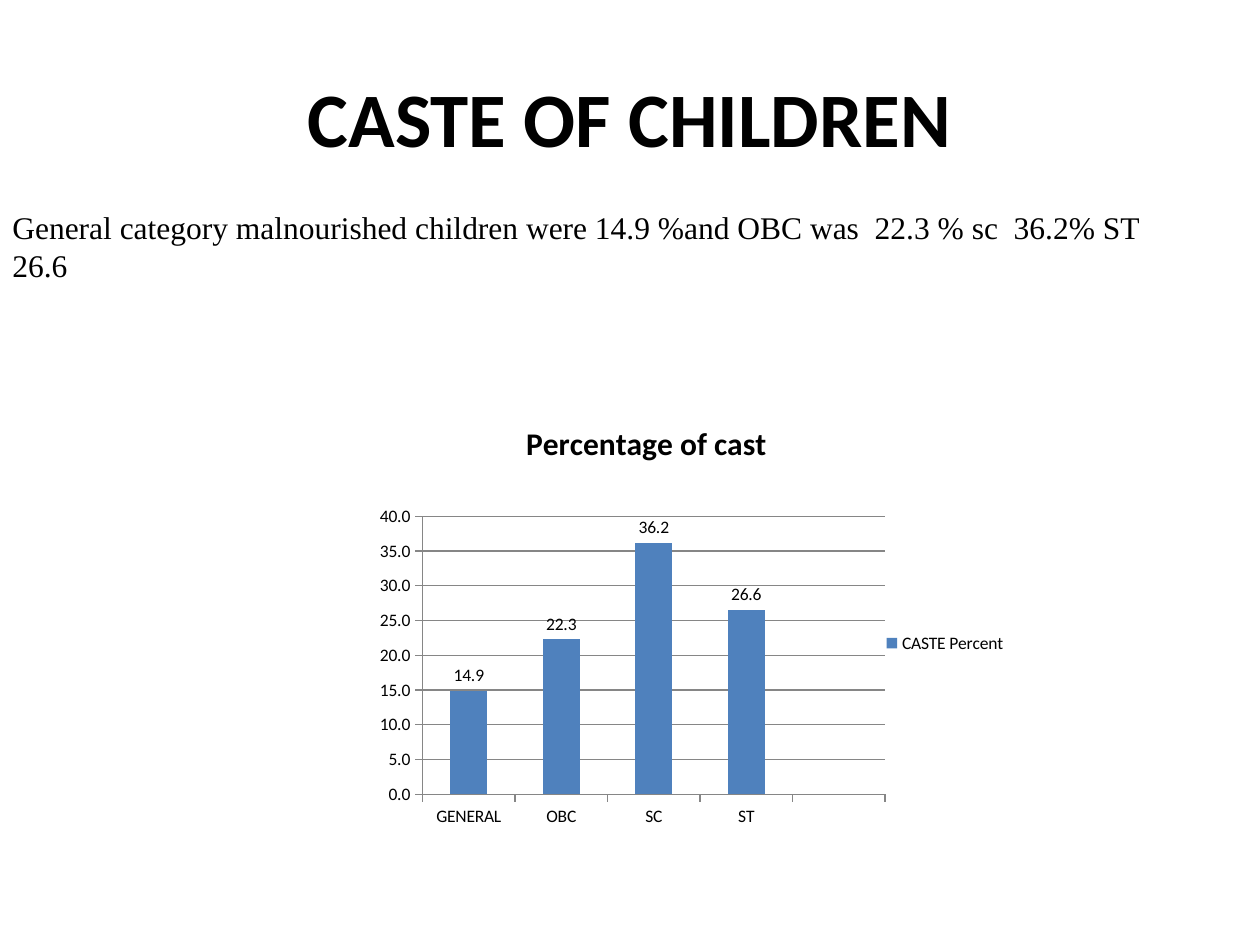
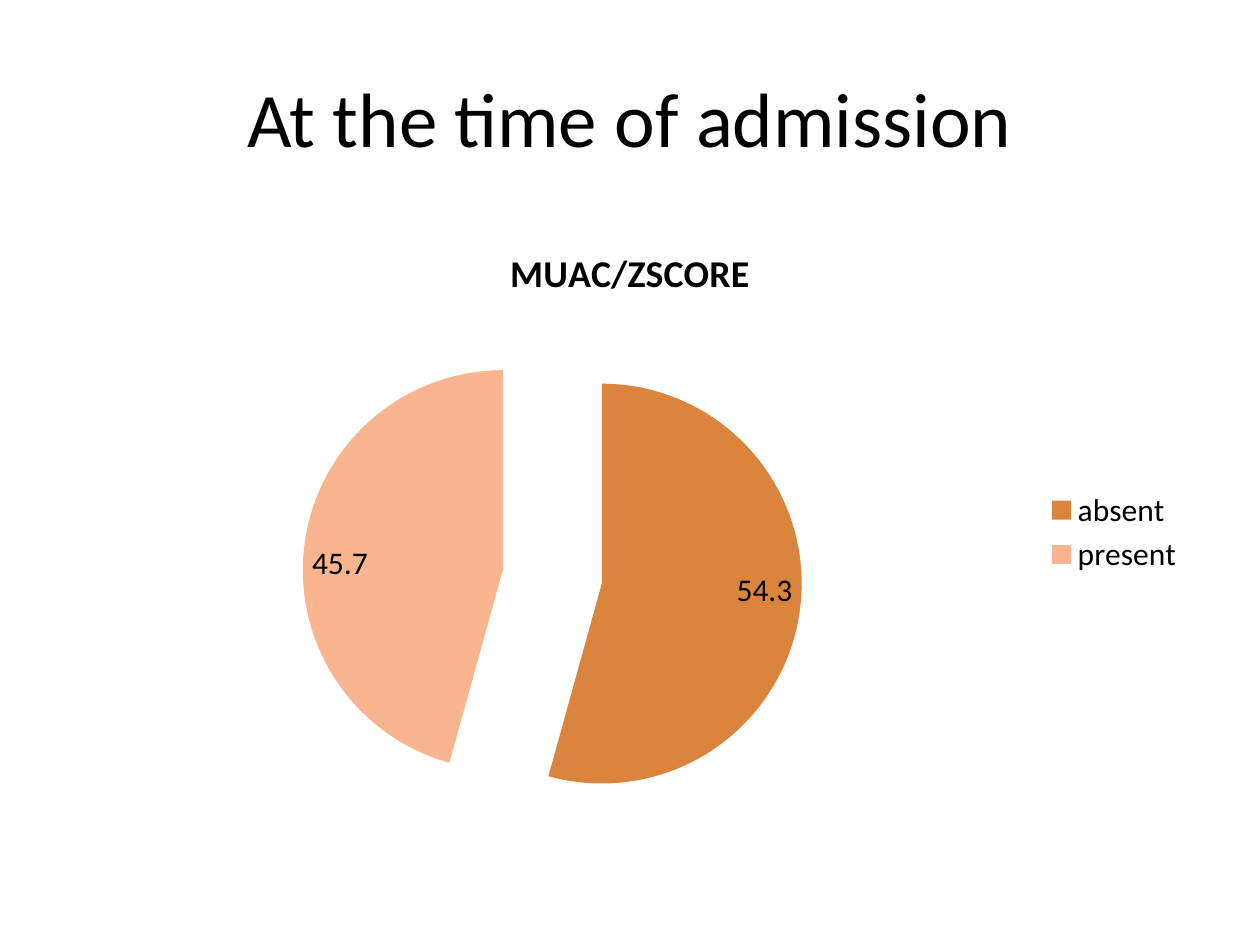
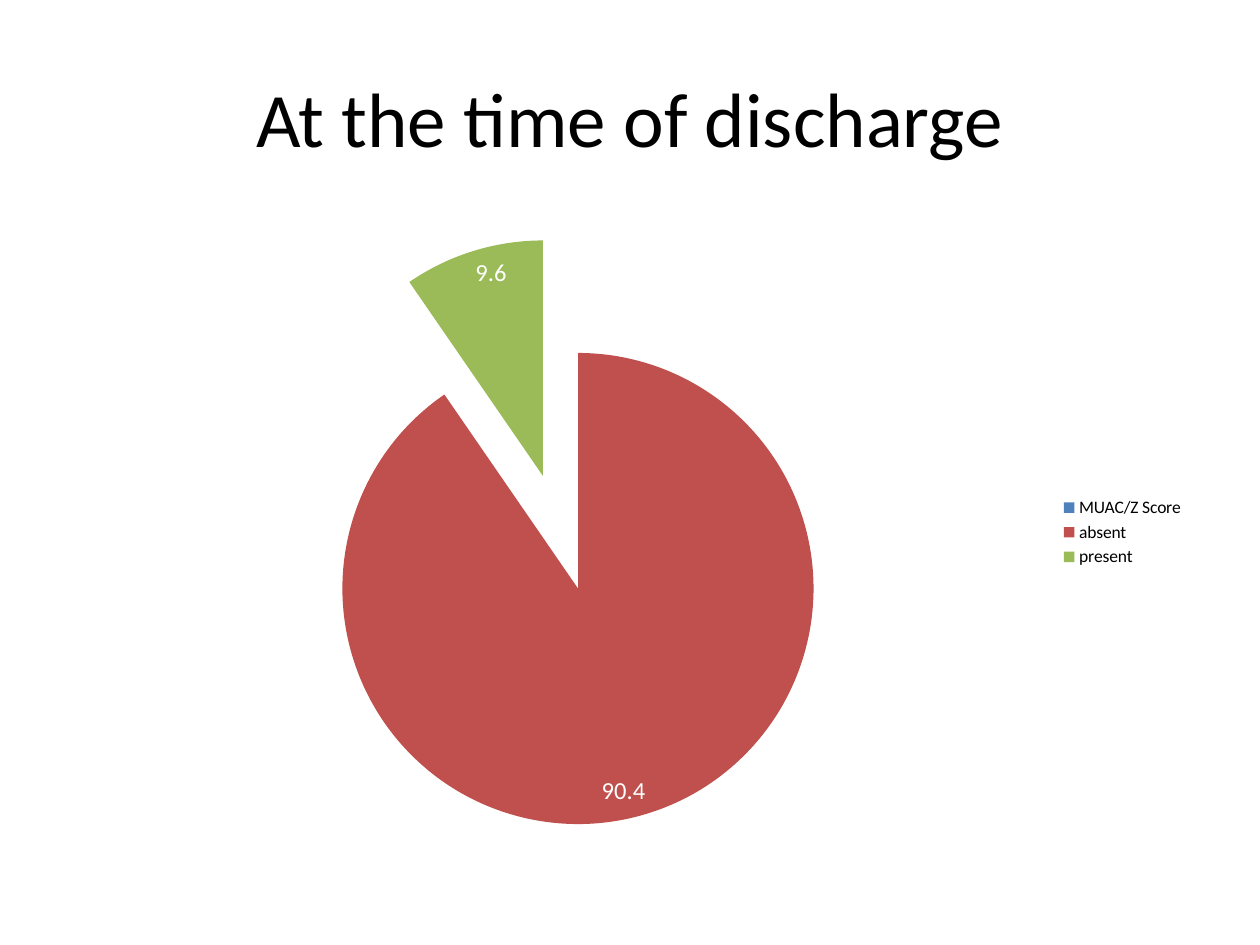
from lxml.etree import SubElement
from pptx import Presentation
from pptx.chart.data import CategoryChartData
from pptx.dml.color import RGBColor
from pptx.enum.chart import XL_CHART_TYPE, XL_LABEL_POSITION, XL_LEGEND_POSITION, XL_TICK_MARK
from pptx.enum.text import MSO_ANCHOR, PP_ALIGN
from pptx.oxml import parse_xml
from pptx.oxml.ns import nsdecls, qn
from pptx.util import Inches, Pt

# Shared look
SANS, SERIF = "Calibri", "Times New Roman"
BLACK, WHITE, GREY = "000000", "FFFFFF", "868686"
BLUE, RED, GREEN = "4F81BD", "C0504D", "9BBB59"
AMBER, PEACH = "DB843D", "F9B590"
HEAD = (0.5, 0.3, 9, 1.25)
BODY = (0.5, 1.75, 9, 4.95)
DECIMAL = "###0.0"


def put(target, form):
    """Set each format value on the target."""
    for name, value in form.items():
        setattr(target, name, value)


def paint(part, color):
    """Colour a font, a line or a fill."""
    if hasattr(part, "solid"):
        part.solid()
        part.fore_color.rgb = RGBColor.from_string(color)
    else:
        part.color.rgb = RGBColor.from_string(color)


def style(font, size, color=BLACK, name=SANS, bold=False):
    put(font, {"size": Pt(size), "name": name, "bold": bold})
    paint(font, color)


# Text
def add_text(slide, words, box, frame, align, **font):
    text = slide.shapes.add_textbox(*map(Inches, box)).text_frame
    put(text, {"word_wrap": True, **frame})
    para = text.paragraphs[0]
    para.alignment = align
    run = para.add_run()
    run.text = words
    style(run.font, **font)


def add_head(slide, words, bold=False):
    add_text(slide, words, HEAD, {"vertical_anchor": MSO_ANCHOR.MIDDLE},
             PP_ALIGN.CENTER, size=44, bold=bold)


# Charts
def add_chart(slide, kind, box, cats, name, vals, size, title=None, title_size=18):
    data = CategoryChartData()
    data.categories = cats
    data.add_series(name, vals)
    chart = slide.shapes.add_chart(kind, *map(Inches, box), data).chart
    style(chart.font, size)
    put(chart, {"has_legend": True, "has_title": title is not None})
    put(chart.legend, {"position": XL_LEGEND_POSITION.RIGHT, "include_in_layout": False})
    if title:
        run = chart.chart_title.text_frame.paragraphs[0].add_run()
        run.text = title
        style(run.font, title_size, bold=True)
    return chart


def add_labels(plot, size, color, code, place):
    plot.has_data_labels = True
    labels = plot.data_labels
    put(labels, {"show_value": True, "number_format": code,
                 "number_format_is_linked": False, "position": place})
    style(labels.font, size, color)


def set_plot(chart, x, y, w, h):
    """Fix the inner plot area as shares of the chart."""
    area = chart._chartSpace.find(".//" + qn("c:plotArea"))
    for old in area.findall(qn("c:layout")):
        area.remove(old)
    layout = parse_xml(f"<c:layout {nsdecls('c')}/>")
    manual = SubElement(layout, qn("c:manualLayout"))
    marks = {"layoutTarget": "inner", "xMode": "edge", "yMode": "edge",
             "x": x, "y": y, "w": w, "h": h}
    for tag, val in marks.items():
        SubElement(manual, qn("c:" + tag)).set("val", str(val))
    area.insert(0, layout)


def add_bars(slide, box, cats, name, vals, title):
    chart = add_chart(slide, XL_CHART_TYPE.COLUMN_CLUSTERED, box, cats, name,
                      vals, 10, title)
    set_plot(chart, 0.2, 0.24, 0.62, 0.57)
    plot = chart.plots[0]
    put(plot, {"gap_width": 150, "vary_by_categories": False})
    paint(plot.series[0].format.fill, BLUE)
    add_labels(plot, 10, BLACK, DECIMAL, XL_LABEL_POSITION.OUTSIDE_END)
    for axis in (chart.category_axis, chart.value_axis):
        put(axis, {"major_tick_mark": XL_TICK_MARK.OUTSIDE,
                   "minor_tick_mark": XL_TICK_MARK.NONE})
        paint(axis.format.line, GREY)
    axis = chart.value_axis
    put(axis, {"has_major_gridlines": True, "minimum_scale": 0,
               "maximum_scale": 40, "major_unit": 5})
    put(axis.tick_labels, {"number_format": DECIMAL, "number_format_is_linked": False})
    paint(axis.major_gridlines.format.line, GREY)


def add_pie(slide, cats, vals, colors, size, label_size, label_color, title=None):
    chart = add_chart(slide, XL_CHART_TYPE.PIE, BODY, cats, "Series 1", vals,
                      size, title, 21.6)
    plot = chart.plots[0]
    plot.vary_by_categories = True
    series = plot.series[0]
    burst = parse_xml(f'<c:explosion {nsdecls("c")} val="25"/>')
    series._element.find(qn("c:tx")).addnext(burst)
    for spot, color in enumerate(colors):
        paint(series.points[spot].format.fill, color)
    add_labels(plot, label_size, label_color, "General", XL_LABEL_POSITION.INSIDE_END)


def main():
    deck = Presentation()
    put(deck, {"slide_width": Inches(10), "slide_height": Inches(7.5)})
    caste, entry, leave = [deck.slides.add_slide(deck.slide_layouts[6]) for _ in range(3)]

    # Caste of children
    add_head(caste, "CASTE OF CHILDREN", bold=True)
    add_bars(caste, (2.17, 3.17, 5.92, 3.87), ["GENERAL", "OBC", "SC", "ST", ""],
             "CASTE Percent", [14.9, 22.3, 36.2, 26.6, None], "Percentage of cast")
    add_text(caste, "General category malnourished children were 14.9 %and OBC was"
             "  22.3 % sc  36.2% ST 26.6", (0, 1.58, 9.58, 1.01),
             {"vertical_anchor": MSO_ANCHOR.TOP, "margin_top": Inches(0.07)},
             PP_ALIGN.LEFT, size=18, name=SERIF)

    # Admission
    add_head(entry, "At the time of admission")
    add_pie(entry, ["absent", "present"], [54.3, 45.7], [AMBER, PEACH],
            18, 18, BLACK, "MUAC/ZSCORE")

    # Discharge
    add_head(leave, "At the time of discharge")
    add_pie(leave, ["MUAC/Z Score", "absent", "present"], [None, 90.4, 9.6],
            [BLUE, RED, GREEN], 10, 14, WHITE)

    deck.save("out.pptx")


if __name__ == "__main__":
    main()
